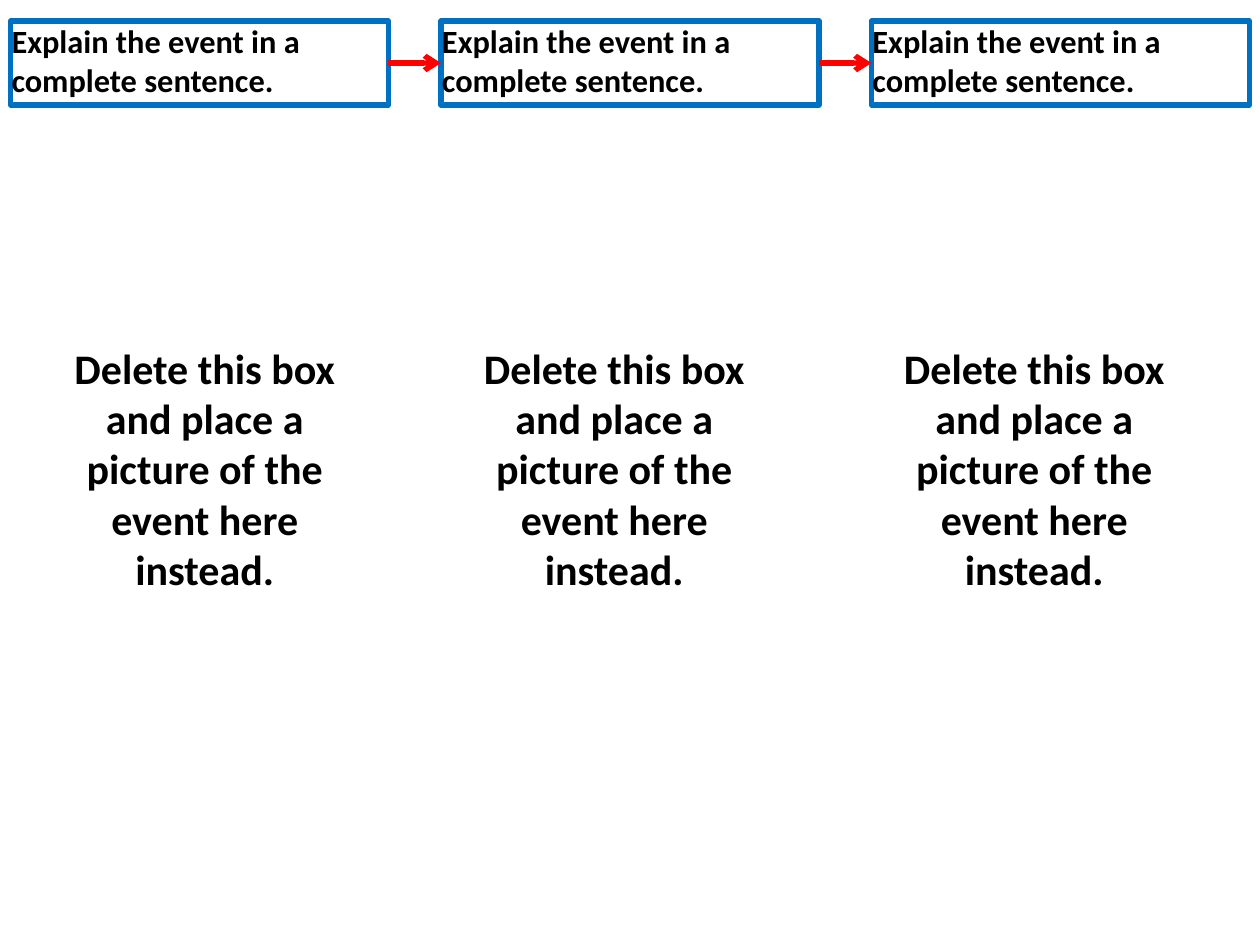
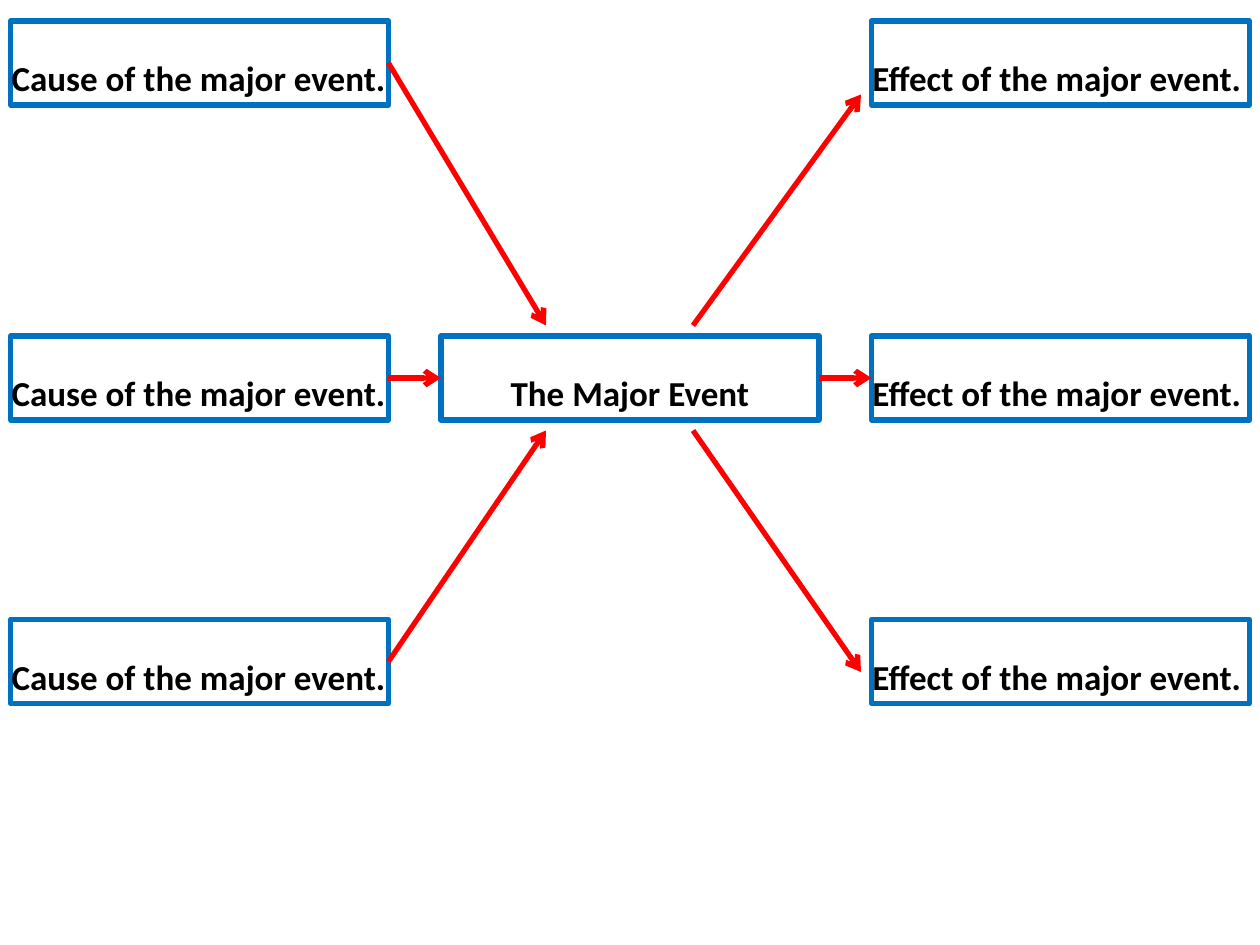
from lxml.etree import SubElement
from pptx import Presentation
from pptx.dml.color import RGBColor
from pptx.enum.shapes import MSO_CONNECTOR, MSO_SHAPE
from pptx.enum.text import MSO_ANCHOR, MSO_AUTO_SIZE, PP_ALIGN
from pptx.oxml.ns import qn
from pptx.util import Pt

PX = 7620  # EMU per px, 120 px to the inch
COLORS = {"text": "000000", "frame": "0070C0", "arrow": "FF0000"}
FONT = "Calibri"
LEFT, MID, RIGHT = (10 + 410 * i for i in range(3))
TOP, CENTER, LOW = 20, 320, 590
BOX_W, BOX_H = 360, 80


def px(*nums):
    return [n * PX for n in nums]


def color(name):
    return RGBColor.from_string(COLORS[name])


def write(frame, text, size, align):
    frame.word_wrap = True
    frame.text = text
    para = frame.paragraphs[0]
    para.alignment = align
    font = para.runs[0].font
    font.name, font.size, font.bold = FONT, Pt(size), True
    font.color.rgb = color("text")


def add_box(slide, x, y, text, size=20, align=PP_ALIGN.LEFT):
    box = slide.shapes.add_shape(MSO_SHAPE.RECTANGLE, *px(x, y, BOX_W, BOX_H))
    box.shadow.inherit = False
    box.fill.background()
    box.line.color.rgb = color("frame")
    box.line.width = Pt(3)
    frame = box.text_frame
    frame.margin_left = frame.margin_right = PX
    frame.margin_top = frame.margin_bottom = 6 * PX
    frame.vertical_anchor = MSO_ANCHOR.BOTTOM
    write(frame, text, size, align)
    return box


def add_note(slide, x, text):
    note = slide.shapes.add_textbox(*px(x, 320, 330, 254))
    write(note.text_frame, text, 24, PP_ALIGN.CENTER)
    note.text_frame.auto_size = MSO_AUTO_SIZE.SHAPE_TO_FIT_TEXT


def add_arrow(slide, start=(0, 0), end=(0, 0), tail=None, head=None):
    """Draw from tail's right side to head's left side, or between points."""
    line = slide.shapes.add_connector(MSO_CONNECTOR.STRAIGHT, *px(*start, *end))
    if tail:
        line.begin_connect(tail, 3)
    if head:
        line.end_connect(head, 1)
    line.line.color.rgb = color("arrow")
    line.line.width = Pt(3)
    SubElement(line.line._get_or_add_ln(), qn("a:tailEnd"), type="arrow")
    SubElement(line._element.spPr, qn("a:effectLst"))


def add_chain(slide):
    text = "Explain the event in a complete sentence."
    boxes = [add_box(slide, x, TOP, text, 18.5) for x in (LEFT, MID, RIGHT)]
    for tail, head in zip(boxes, boxes[1:]):
        add_arrow(slide, tail=tail, head=head)
    for x in (30, 420, 820):
        add_note(slide, x, "Delete this box and place a picture of the event here instead.")


def add_causes(slide):
    """Link three causes to the major event and the event to three effects."""
    rows = (TOP, CENTER, LOW)
    event = add_box(slide, MID, CENTER, "The Major Event", align=PP_ALIGN.CENTER)
    causes = [add_box(slide, LEFT, y, "Cause of the major event.") for y in rows]
    effects = [add_box(slide, RIGHT, y, "Effect of the major event.") for y in rows]
    add_arrow(slide, tail=causes[1], head=event)
    add_arrow(slide, tail=event, head=effects[1])
    for cause, y in ((causes[0], 310), (causes[2], 410)):
        add_arrow(slide, end=(520, y), tail=cause)
    for y, end in ((310, 90), (410, 640)):
        add_arrow(slide, (660, y), (820, end))


def main():
    deck = Presentation()
    deck.slide_width, deck.slide_height = px(1200, 900)
    blank = deck.slide_layouts[6]
    for build in (add_chain, add_causes):
        build(deck.slides.add_slide(blank))
    deck.save("out.pptx")


if __name__ == "__main__":
    main()
